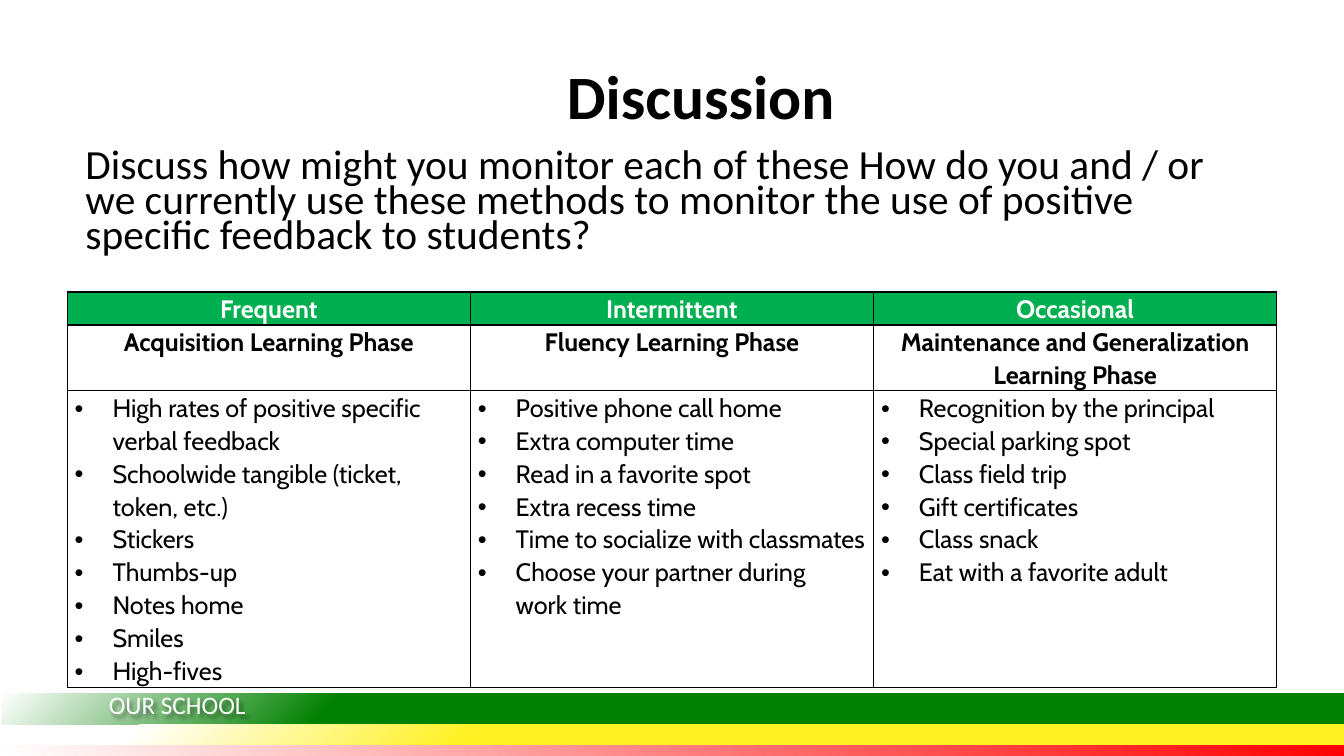
import lxml.etree
import pptx
import pptx.dml.color
import pptx.enum.shapes
import pptx.enum.text
import pptx.oxml
import pptx.oxml.ns
import pptx.util

Pt = pptx.util.Pt
CENTER = pptx.enum.text.PP_ALIGN.CENTER
NS = pptx.oxml.ns.nsdecls("a")

# Bands: top, height, colour stops from the right, corner the gradient starts at
BANDS = [
    (532, 8.6, [(0, "FF0000"), (100, "FFFFFF")], 't="0" b="100000"'),
    (495.2, 22.6, [(0, "008000"), (75, "008000"), (100, "FFFFFF")],
     't="100000" b="0"'),
    (517.8, 14.2, [(0, "FFF123"), (65, "FFF123"), (90, "FFFFFF"), (100, "FFFFFF")],
     't="100000" b="0"'),
]

QUESTION = ("Discuss how might you monitor each of these How do you and / or "
            "we currently use these methods to monitor the use of positive "
            "specific feedback to students?")

# Columns: frequency, learning phase, kinds of feedback
FEEDBACK = [
    ("Frequent", "Acquisition Learning Phase", [
        "High rates of positive specific verbal feedback",
        "Schoolwide tangible (ticket, token, etc.)",
        "Stickers", "Thumbs-up", "Notes home", "Smiles", "High-fives"]),
    ("Intermittent", "Fluency Learning Phase", [
        "Positive phone call home", "Extra computer time",
        "Read in a favorite spot", "Extra recess time",
        "Time to socialize with classmates",
        "Choose your partner during\vwork time"]),
    ("Occasional", "Maintenance and Generalization Learning Phase", [
        "Recognition by the principal", "Special parking spot",
        "Class field trip", "Gift certificates", "Class snack",
        "Eat with a favorite adult"]),
]
ROW_HEIGHTS = [23.6, 47, 212]
COLUMN_WIDTH = 288


def color(hex_code):
    return pptx.dml.color.RGBColor.from_string(hex_code)


def xml(text):
    return pptx.oxml.parse_xml(text)


def style_runs(paragraph, size, font, hex_code, bold=False):
    for run in paragraph.runs:
        run.font.size = Pt(size)
        run.font.name = font
        run.font.bold = bold
        run.font.color.rgb = color(hex_code)


def add_band(slide, top, height, stops, corner):
    band = slide.shapes.add_shape(pptx.enum.shapes.MSO_SHAPE.RECTANGLE,
                                  Pt(1.4), Pt(top), Pt(960), Pt(height))
    band.shadow.inherit = False
    band.line.fill.background()
    stop_list = "".join(
        f'<a:gs pos="{position * 1000}"><a:srgbClr val="{hex_code}"/></a:gs>'
        for position, hex_code in stops)
    gradient = xml(
        f'<a:gradFill {NS} rotWithShape="1"><a:gsLst>{stop_list}</a:gsLst>'
        f'<a:path path="circle"><a:fillToRect l="100000" r="0" {corner}/></a:path>'
        '</a:gradFill>')
    band.element.spPr.find(pptx.oxml.ns.qn("a:prstGeom")).addnext(gradient)


def add_text(slide, box, text, size, hex_code="000000", bold=False):
    text_box = slide.shapes.add_textbox(*[Pt(length) for length in box])
    frame = text_box.text_frame
    frame.word_wrap = True
    frame.text = text
    style_runs(frame.paragraphs[0], size, "Calibri", hex_code, bold)
    return text_box


def add_text_shadow(text_box):
    text_box.element.spPr.append(xml(
        f'<a:effectLst {NS}><a:outerShdw blurRad="38100" dist="38100" dir="2700000">'
        '<a:srgbClr val="000000"><a:alpha val="43000"/></a:srgbClr>'
        '</a:outerShdw></a:effectLst>'))


def add_bullet(paragraph):
    properties = paragraph._p.get_or_add_pPr()
    properties.set("marL", str(Pt(27)))
    properties.set("indent", str(-Pt(27)))
    for bullet_part in (f'<a:buClr {NS}><a:srgbClr val="000000"/></a:buClr>',
                        f'<a:buFont {NS} typeface="Arial"/>',
                        f'<a:buChar {NS} char="•"/>'):
        properties.append(xml(bullet_part))


def add_borders(cell):
    properties = cell._tc.get_or_add_tcPr()
    for index, side in enumerate("LRTB"):
        properties.insert(index, xml(
            f'<a:ln{side} {NS} w="{Pt(1)}"><a:solidFill><a:srgbClr val="000000"/>'
            f'</a:solidFill></a:ln{side}>'))


def fill_cell(cell, lines, hex_code="000000", bold=False, bullets=False, fill=None):
    cell.margin_left = cell.margin_right = Pt(5.4)
    cell.margin_top = cell.margin_bottom = 0
    if fill:
        cell.fill.solid()
        cell.fill.fore_color.rgb = color(fill)
    else:
        cell.fill.background()
    add_borders(cell)
    cell.text_frame.text = "\n".join(lines)
    for paragraph in cell.text_frame.paragraphs:
        paragraph.line_spacing = 1.07
        style_runs(paragraph, 18, "Cabin", hex_code, bold)
        if bullets:
            add_bullet(paragraph)
        else:
            paragraph.alignment = CENTER
            paragraph.space_after = Pt(8)


def add_feedback_table(slide):
    table = slide.shapes.add_table(
        len(ROW_HEIGHTS), len(FEEDBACK), Pt(48), Pt(208.6),
        Pt(COLUMN_WIDTH * len(FEEDBACK)), Pt(sum(ROW_HEIGHTS))).table
    table.horz_banding = False
    for row, height in zip(table.rows, ROW_HEIGHTS):
        row.height = Pt(height)
    for column, (frequency, phase, examples) in enumerate(FEEDBACK):
        table.columns[column].width = Pt(COLUMN_WIDTH)
        fill_cell(table.cell(0, column), [frequency], "FFFFFF", True, fill="00B050")
        fill_cell(table.cell(1, column), [phase], bold=True)
        fill_cell(table.cell(2, column), examples, bullets=True)


def main():
    deck = pptx.Presentation()
    deck.slide_width, deck.slide_height = Pt(960), Pt(540)
    slide = deck.slides.add_slide(deck.slide_layouts[6])

    # Footer
    for band in BANDS:
        add_band(slide, *band)
    footer = add_text(slide, (70.6, 489, 183.6, 28.8), "OUR SCHOOL", 18, "FFFFFF")
    add_text_shadow(footer)

    # Title
    title = add_text(slide, (208, 31, 585.4, 74.2), "Discussion", 44, bold=True).text_frame
    title.vertical_anchor = pptx.enum.text.MSO_ANCHOR.MIDDLE
    title.margin_top = title.margin_bottom = Pt(7.2)
    title.paragraphs[0].alignment = CENTER

    # Question
    question = add_text(slide, (36, 105.1, 849.6, 89.3), QUESTION, 29.6).text_frame
    question.paragraphs[0].line_spacing = 0.7
    question.paragraphs[0]._p.get_or_add_pPr().set("marL", str(Pt(18)))

    # Feedback methods
    add_feedback_table(slide)

    deck.save("out.pptx")


if __name__ == "__main__":
    main()
